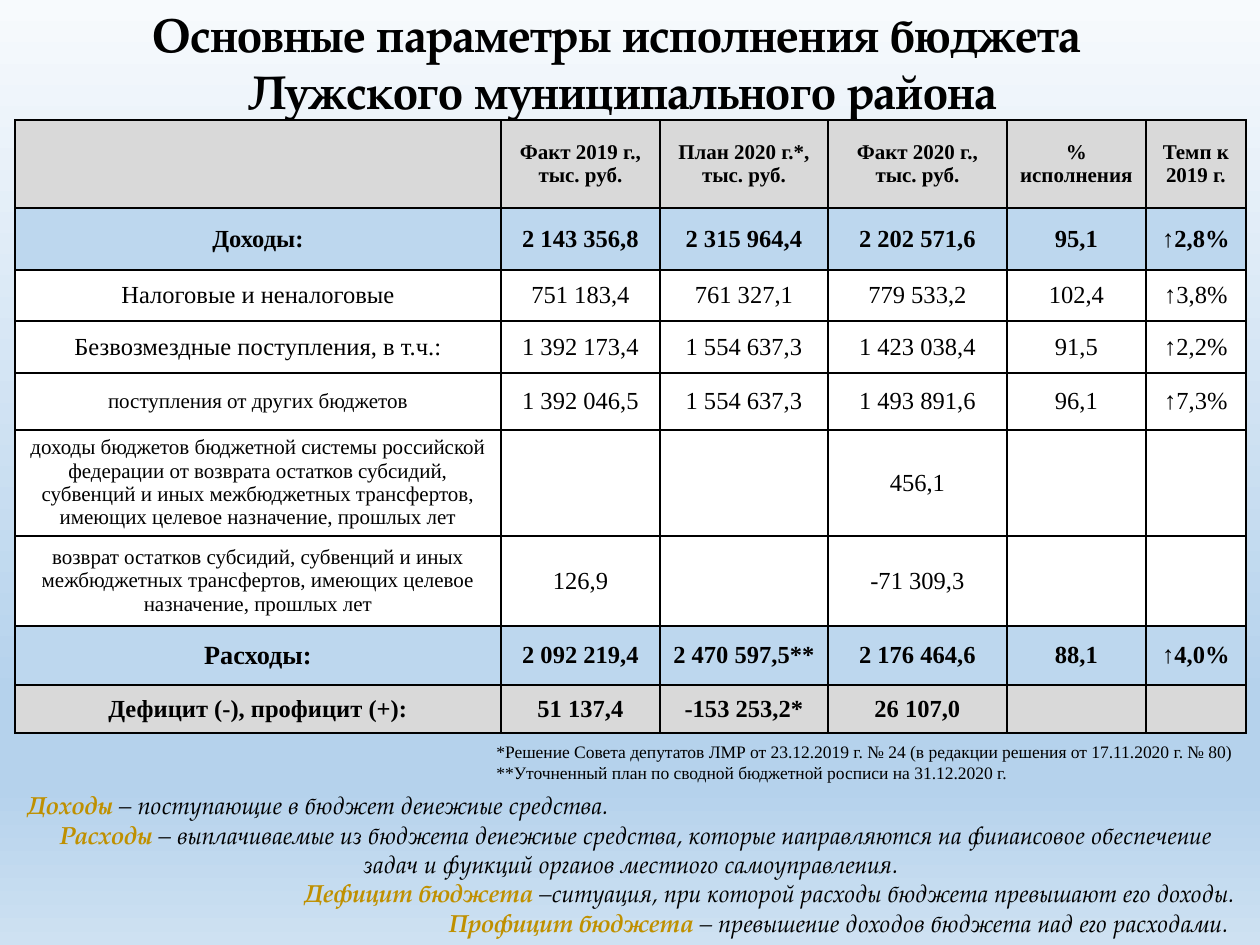
from lxml import etree
from pptx import Presentation
from pptx import util as u
from pptx.dml.color import RGBColor
from pptx.enum import text
from pptx.oxml.ns import qn

PX = 914400 / 126
SERIF, PAGELLA = "Times New Roman", "TeX Gyre Pagella"
BLACK, GOLD = "000000", "BF9000"
GREY, BLUE, WHITE = "D9D9D9", "BDD7EE", "FFFFFF"
LEFT, CENTER, RIGHT = (text.PP_ALIGN.LEFT, text.PP_ALIGN.CENTER,
                       text.PP_ALIGN.RIGHT)


def px(*lengths):
    """Turn pixel lengths into a list of EMU lengths."""
    return [u.Emu(round(n * PX)) for n in lengths]


def add_run(p, words, font, size, color=BLACK, bold=False, italic=False):
    r = p.add_run()
    r.text = words
    r.font.name, r.font.size = font, u.Pt(size)
    r.font.bold, r.font.italic = bold, italic
    r.font.color.rgb = RGBColor.from_string(color)


prs = Presentation()
prs.slide_width, prs.slide_height = px(1260, 945)
s = prs.slides.add_slide(prs.slide_layouts[5])

# Background gradient, top to bottom
fill = s.background.fill
fill.gradient()
fill.gradient_angle = 270
stops = s.element.find(".//" + qn("a:gsLst"))
for stop in list(stops):
    stops.remove(stop)
for percent, color in [(0, "F7FAFD"), (74, "B5D2EC"), (83, "B5D2EC"), (100, "CEE1F2")]:
    stop = etree.SubElement(stops, qn("a:gs"), pos=str(percent * 1000))
    etree.SubElement(stop, qn("a:srgbClr"), val=color)

# Title
title = s.shapes.title
title.left, title.top, title.width, title.height = px(64, -1, 1106, 131)
tf = title.text_frame
tf.auto_size = text.MSO_AUTO_SIZE.NONE
tf.vertical_anchor = text.MSO_ANCHOR.TOP
for i, line in enumerate(["Основные параметры исполнения бюджета",
                          " Лужского муниципального района"]):
    p = tf.add_paragraph() if i else tf.paragraphs[0]
    p.alignment = CENTER
    add_run(p, line, PAGELLA, 27, bold=True)

# Budget table: fill, bold, label size, value size, cells
rows = [
    (88, GREY, True, 12, 12, ["", "Факт 2019 г., тыс. руб.", "План 2020 г.*, тыс. руб.",
                              "Факт 2020 г., тыс. руб.", "% исполнения", "Темп к 2019 г."]),
    (62, BLUE, True, 14, 14, ["Доходы:", "2 143 356,8", "2 315 964,4", "2 202 571,6",
                              "95,1", "↑2,8%"]),
    (51, WHITE, False, 14, 14, ["Налоговые и неналоговые", "751 183,4", "761 327,1",
                                "779 533,2", "102,4", "↑3,8%"]),
    (52, WHITE, False, 14, 14, ["Безвозмездные поступления, в т.ч.:", "1 392 173,4",
                                "1 554 637,3", "1 423 038,4", "91,5", "↑2,2%"]),
    (57, WHITE, False, 12, 14, ["поступления от других бюджетов", "1 392 046,5",
                                "1 554 637,3", "1 493 891,6", "96,1", "↑7,3%"]),
    (106, WHITE, False, 12, 14, ["доходы бюджетов бюджетной системы российской федерации "
                                 "от возврата остатков субсидий, субвенций и иных "
                                 "межбюджетных трансфертов, имеющих целевое назначение, "
                                 "прошлых лет", "", "", "456,1", "", ""]),
    (90, WHITE, False, 12, 14, ["возврат остатков субсидий, субвенций и иных межбюджетных "
                                "трансфертов, имеющих целевое назначение, прошлых лет",
                                "126,9", "", "-71 309,3", "", ""]),
    (59, BLUE, True, 15, 14, ["Расходы:", "2 092 219,4", "2 470 597,5**", "2 176 464,6",
                              "88,1", "↑4,0%"]),
    (48, GREY, True, 14, 14, ["Дефицит (-), профицит (+):", "51 137,4", "-153 253,2*",
                              "26 107,0", "", ""]),
]
widths = [486, 159, 168, 179, 139, 100]
heights = [row[0] for row in rows]
table = s.shapes.add_table(len(rows), len(widths),
                           *px(15, 120, sum(widths), sum(heights))).table
for column, width in zip(table.columns, px(*widths)):
    column.width = width
for table_row, height in zip(table.rows, px(*heights)):
    table_row.height = height

for i, (_, color, bold, label_size, value_size, cells) in enumerate(rows):
    for j, words in enumerate(cells):
        cell = table.cell(i, j)
        cell.vertical_anchor = text.MSO_ANCHOR.MIDDLE
        p = cell.text_frame.paragraphs[0]
        p.alignment = CENTER
        add_run(p, words, SERIF, value_size if j else label_size, bold=bold)
        tc_pr = cell._tc.get_or_add_tcPr()
        for side in ("a:lnL", "a:lnR", "a:lnT", "a:lnB"):
            border = etree.SubElement(tc_pr, qn(side), w=str(u.Pt(1)))
            solid = etree.SubElement(border, qn("a:solidFill"))
            etree.SubElement(solid, qn("a:srgbClr"), val=BLACK)
        cell.fill.solid()
        cell.fill.fore_color.rgb = RGBColor.from_string(color)

# Definitions of the budget terms
definitions = [
    (LEFT, 0, "Доходы ", "– поступающие в бюджет денежные средства."),
    (CENTER, 10, "Расходы ", "– выплачиваемые из бюджета денежные средства, которые "
     "направляются на финансовое обеспечение задач и функций органов местного "
     "самоуправления."),
    (RIGHT, 0, "Дефицит бюджета", " –ситуация, при которой расходы бюджета превышают "
     "его доходы."),
    (RIGHT, 0, "Профицит бюджета ", "– превышение доходов бюджета над его расходами. "),
]
tf = s.shapes.add_textbox(*px(15, 784, 1232, 161)).text_frame
tf.word_wrap = True
for i, (align, indent, term, meaning) in enumerate(definitions):
    p = tf.add_paragraph() if i else tf.paragraphs[0]
    p.alignment = align
    if indent:
        p._p.get_or_add_pPr().set("indent", str(px(indent)[0]))
    add_run(p, term, PAGELLA, 14, GOLD, bold=True, italic=True)
    add_run(p, meaning, PAGELLA, 14, italic=True)

# Footnotes to the table
tf = s.shapes.add_textbox(*px(484, 735, 762, 49)).text_frame
tf.word_wrap = False
for i, note in enumerate([
        "*Решение Совета депутатов ЛМР от 23.12.2019 г. № 24 "
        "(в редакции решения от 17.11.2020 г. № 80)",
        "**Уточненный план по сводной бюджетной росписи на 31.12.2020 г."]):
    p = tf.add_paragraph() if i else tf.paragraphs[0]
    add_run(p, note, SERIF, 10)

prs.save("out.pptx")
